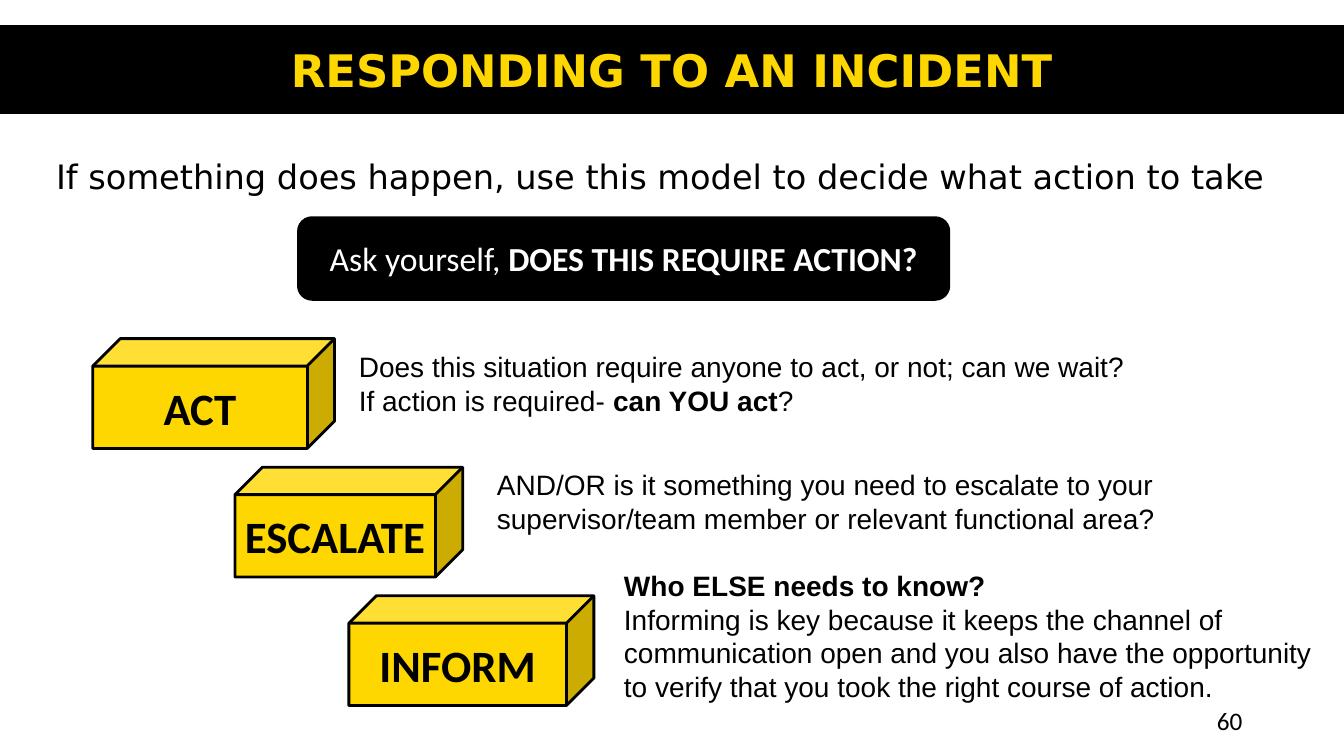
"""Build the incident response slide with its staircase of three actions."""
from dataclasses import dataclass

from pptx import Presentation
from pptx import util as u
from pptx.dml.color import RGBColor
from pptx.enum import shapes, text


@dataclass(frozen=True)
class Theme:
    black: RGBColor = RGBColor(0, 0, 0)
    gold: RGBColor = RGBColor(0xFF, 0xD7, 0)
    white: RGBColor = RGBColor(255, 255, 255)
    display: str = "DejaVu Sans"
    body: str = "Arial"
    label: str = "Calibri"
    heading: int = 32
    lead: int = 24
    detail: int = 20
    small: int = 18
    outline: int = 2


class Slide:
    def __init__(self, deck, theme):
        self.theme = theme
        self.width, self.height = deck.slide_width, deck.slide_height
        self.page = deck.slides.add_slide(deck.slide_layouts[6])

    def place(self, area):
        """Turn percentages of the slide into left, top, width and height."""
        sizes = (self.width, self.height) * 2
        return [round(size * share / 100) for size, share in zip(sizes, area)]

    def fill_text(self, box, spans, font, size, color, align, anchor, spacing=None, after=None):
        frame = box.text_frame
        frame.word_wrap = True
        frame.vertical_anchor = anchor
        para = frame.paragraphs[0]
        layout = {"alignment": align, "line_spacing": spacing, "space_after": after}
        for name, value in layout.items():
            setattr(para, name, value)
        for words, bold in spans:
            if words == "\n":
                para.add_line_break()
                continue
            span = para.add_run()
            span.text = words
            style = {"name": font, "size": u.Pt(size), "bold": bold}
            for name, value in style.items():
                setattr(span.font, name, value)
            span.font.color.rgb = color

    def label(self, area, spans, font, size, color=None, align=text.PP_ALIGN.LEFT,
              anchor=text.MSO_ANCHOR.TOP, **spacing):
        box = self.page.shapes.add_textbox(*self.place(area))
        self.fill_text(box, spans, font, size, color or self.theme.black, align, anchor, **spacing)

    def block(self, kind, area, fill, spans=(), size=0, color=None):
        box = self.page.shapes.add_shape(kind, *self.place(area))
        box.shadow.inherit = False
        box.fill.solid()
        box.fill.fore_color.rgb = fill
        box.line.color.rgb = self.theme.black
        box.line.width = u.Pt(self.theme.outline)
        box.text_frame.margin_left = box.text_frame.margin_right = u.Inches(0.05)
        self.fill_text(box, spans, self.theme.label, size, color,
                       text.PP_ALIGN.CENTER, text.MSO_ANCHOR.MIDDLE)


STEPS = [
    ("ACT", (6.9, 18), (25.96, 45.6, 59.19, 10.27), [
        ("Does this situation require anyone to act, or not; can we wait?", False),
        ("\n", False),
        ("If action is required- ", False), ("can YOU act", True), ("?", False)]),
    ("ESCALATE", (17.48, 16.95), (36.23, 61.2, 52.59, 10.27), [
        ("AND/OR is it something you need to escalate to your "
         "supervisor/team member or relevant functional area?", False)]),
    ("INFORM", (25.96, 18.23), (45.69, 74.53, 53.64, 19.2), [
        ("Who ELSE needs to know?", True),
        ("\n", False),
        ("Informing is key because it keeps the channel of communication open "
         "and you also have the opportunity to verify that you took the right "
         "course of action.", False)]),
]
STEP_TOP, STEP_RISE, STEP_HEIGHT = 44.8, 17, 14.53


def main():
    deck = Presentation()
    deck.slide_width, deck.slide_height = u.Inches(13.33), u.Inches(7.5)
    theme = Theme()
    slide = Slide(deck, theme)
    kinds, align = shapes.MSO_SHAPE, text.PP_ALIGN

    slide.block(kinds.RECTANGLE, (0, 3.47, 100, 11.47), theme.black)
    slide.label((0, 4.93, 100, 8.53), [("RESPONDING TO AN INCIDENT", True)],
                theme.display, theme.heading, theme.gold, align.CENTER)
    slide.label((2.18, 18.93, 93.92, 6.67),
                [("If something does happen, use this model to decide what action to take", False)],
                theme.display, theme.lead, align=align.CENTER, spacing=1.2, after=u.Pt(6))
    slide.block(kinds.ROUNDED_RECTANGLE, (22.21, 28.8, 48.39, 10.8), theme.black,
                [("Ask yourself, ", False), ("DOES THIS REQUIRE ACTION?", True)],
                theme.lead, theme.white)

    for index, (name, (left, width), detail_area, detail) in enumerate(STEPS):
        cube_area = (left, STEP_TOP + index * STEP_RISE, width, STEP_HEIGHT)
        slide.block(kinds.CUBE, cube_area, theme.gold, [(name, True)],
                    theme.heading, theme.black)
        slide.label(detail_area, detail, theme.body, theme.detail)

    slide.label((70.67, 92.67, 22.51, 5.33), [("60", False)], theme.label, theme.small,
                align=align.RIGHT, anchor=text.MSO_ANCHOR.MIDDLE)
    deck.save("out.pptx")


if __name__ == "__main__":
    main()
